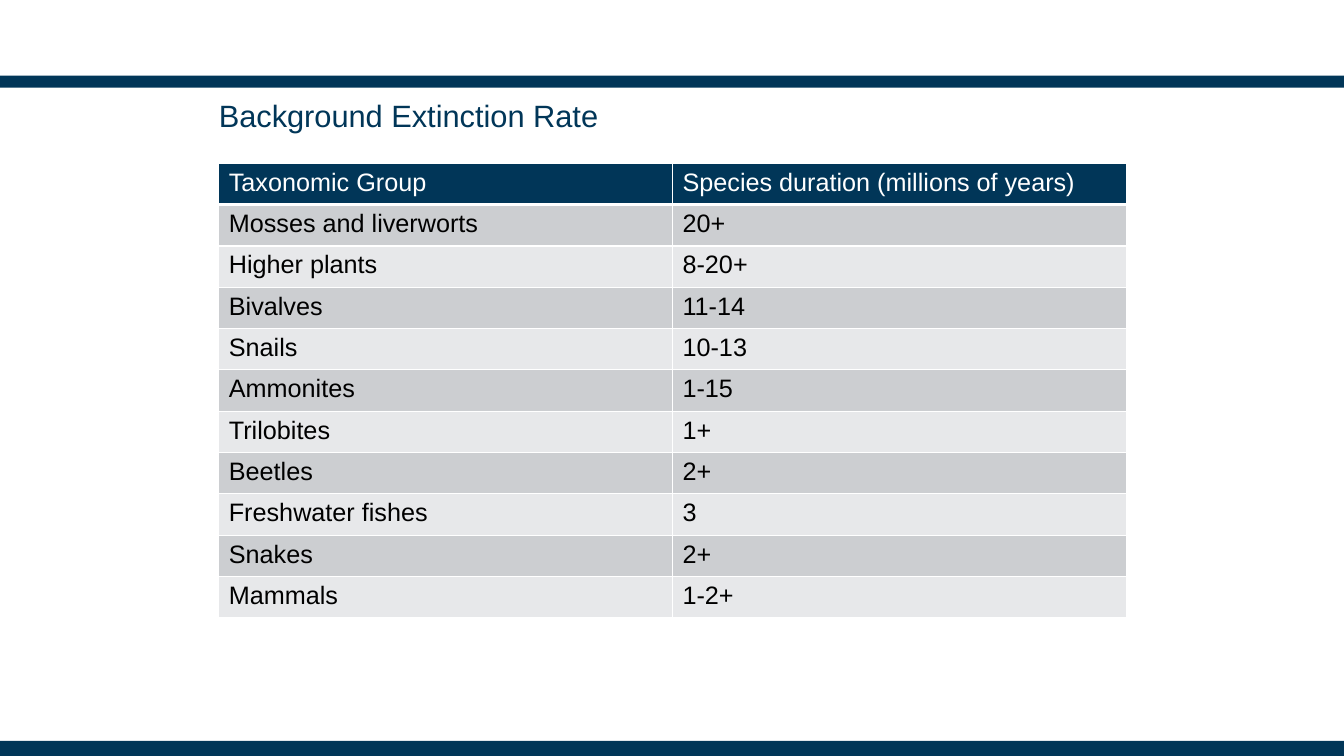
from dataclasses import dataclass

from lxml.etree import SubElement
from pptx import Presentation
from pptx.dml.color import RGBColor as RGB
from pptx.enum.shapes import MSO_SHAPE as Shape
from pptx.enum.text import MSO_ANCHOR as Anchor, MSO_AUTO_SIZE as AutoSize, PP_ALIGN as Align
from pptx.oxml.ns import qn
from pptx.util import Inches, Pt


@dataclass(frozen=True)
class Theme:
    """Colours, font and type sizes of the slide."""
    navy: str = "013658"
    white: str = "FFFFFF"
    black: str = "000000"
    bands: tuple = ("CCCED1", "E7E8EA")
    font: str = "Arial"
    title: int = 22
    body: int = 18


THEME = Theme()
WIDTH, HEIGHT = 13.33, 7.5
LEFT, CONTENT = 2.17, 9
ROW = 0.41
DURATIONS = [
    ("Taxonomic Group", "Species duration (millions of years)"),
    ("Mosses and liverworts", "20+"),
    ("Higher plants", "8-20+"),
    ("Bivalves", "11-14"),
    ("Snails", "10-13"),
    ("Ammonites", "1-15"),
    ("Trilobites", "1+"),
    ("Beetles", "2+"),
    ("Freshwater fishes", "3"),
    ("Snakes", "2+"),
    ("Mammals", "1-2+"),
]


def add_run(p, text, size, color):
    """Add one formatted run to a paragraph."""
    r = p.add_run()
    r.text = text
    r.font.name, r.font.size = THEME.font, Pt(size)
    r.font.color.rgb = RGB.from_string(color)


def add_bar(s, x, y, w, h):
    """Draw a plain navy bar in the given box."""
    sp = s.shapes.add_shape(Shape.RECTANGLE, *map(Inches, (x, y, w, h)))
    sp.shadow.inherit = False
    sp.fill.solid()
    sp.fill.fore_color.rgb = RGB.from_string(THEME.navy)
    sp.line.fill.background()


def set_title(s, text, x, y, w, h):
    """Place and format the title in the given box."""
    sp = s.shapes.title
    sp.left, sp.top, sp.width, sp.height = map(Inches, (x, y, w, h))
    tf = sp.text_frame
    tf.margin_left = tf.margin_right = tf.margin_top = tf.margin_bottom = 0
    tf.word_wrap, tf.auto_size = True, AutoSize.NONE
    tf.vertical_anchor = Anchor.MIDDLE
    p = tf.paragraphs[0]
    p.alignment, p.line_spacing = Align.LEFT, Pt(24)
    add_run(p, text, THEME.title, THEME.navy)


def set_borders(cell, bottom):
    """Give a cell white borders, 1 pt except for the bottom one."""
    tc_pr = cell._tc.get_or_add_tcPr()
    for side, width in zip("LRTB", (1, 1, 1, bottom)):
        ln = SubElement(tc_pr, qn(f"a:ln{side}"), w=str(Pt(width)))
        fill = SubElement(ln, qn("a:solidFill"))
        SubElement(fill, qn("a:srgbClr"), val=THEME.white)


def add_banded_table(s, rows, x, y, w, h):
    """Fill the given box with a table: navy header, alternating grey rows."""
    box = map(Inches, (x, y, w, h))
    table = s.shapes.add_table(len(rows), len(rows[0]), *box).table
    for i, values in enumerate(rows):
        table.rows[i].height = Inches(h / len(rows))
        header = i == 0
        fill = THEME.navy if header else THEME.bands[(i - 1) % 2]
        color = THEME.white if header else THEME.black
        for cell, text in zip(table.rows[i].cells, values):
            set_borders(cell, 3 if header else 1)
            cell.fill.solid()
            cell.fill.fore_color.rgb = RGB.from_string(fill)
            add_run(cell.text_frame.paragraphs[0], text, THEME.body, color)


def add_extinction_slide(prs):
    """Add the title-only slide with its bars, title and table."""
    s = prs.slides.add_slide(prs.slide_layouts[5])
    add_bar(s, 0, HEIGHT * 0.1, WIDTH, 0.12)
    add_bar(s, 0, HEIGHT * 0.98, WIDTH, HEIGHT * 0.02)
    set_title(s, "Background Extinction Rate", LEFT, 0.77, CONTENT, 0.78)
    add_banded_table(s, DURATIONS, LEFT, 1.62, CONTENT, ROW * len(DURATIONS))


def main():
    """Build and save the presentation."""
    prs = Presentation()
    prs.slide_width, prs.slide_height = Inches(WIDTH), Inches(HEIGHT)
    add_extinction_slide(prs)
    prs.save("out.pptx")


if __name__ == "__main__":
    main()
